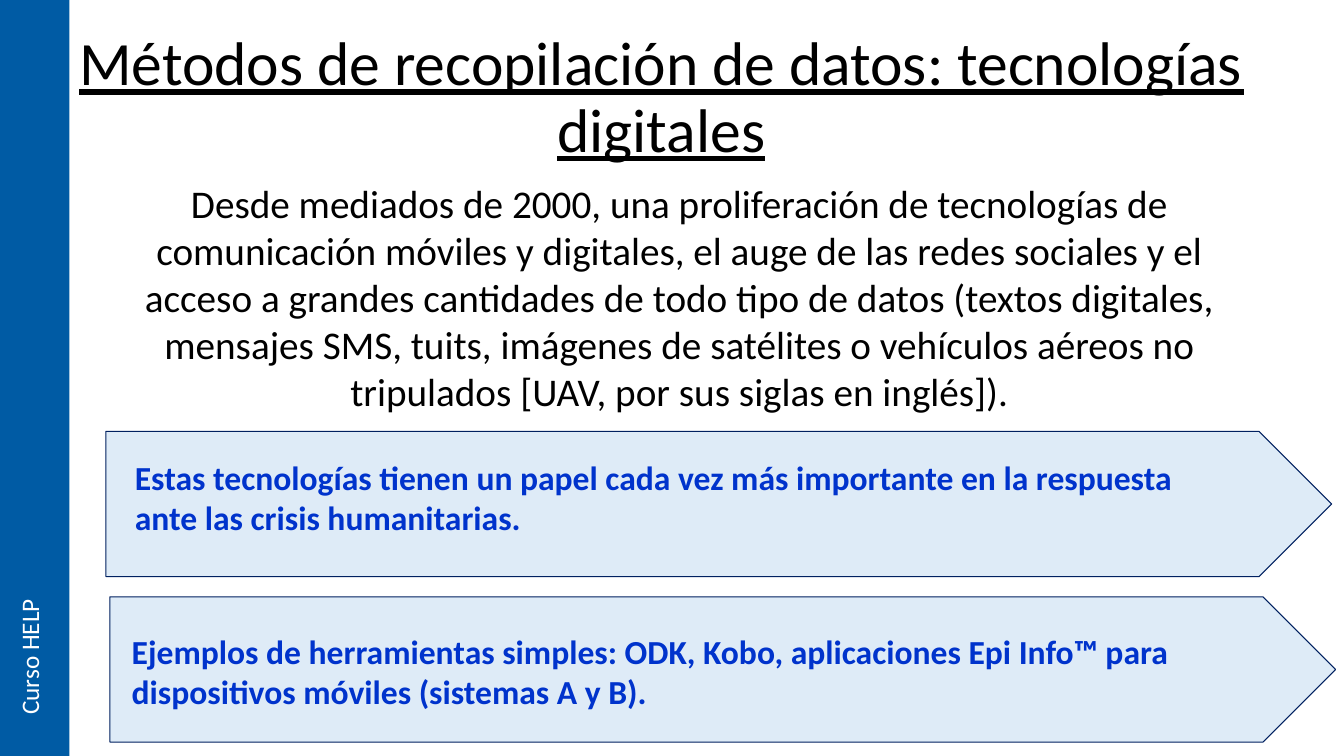
from dataclasses import dataclass

from pptx import Presentation
from pptx.dml.color import RGBColor
from pptx.enum.shapes import MSO_SHAPE
from pptx.enum.text import MSO_ANCHOR, PP_ALIGN
from pptx.shapes.autoshape import Shape
from pptx.slide import Slide
from pptx.util import Cm, Pt

RECTANGLE, PENTAGON = MSO_SHAPE.RECTANGLE, MSO_SHAPE.PENTAGON
LEFT, CENTER = PP_ALIGN.LEFT, PP_ALIGN.CENTER
TOP, MIDDLE = MSO_ANCHOR.TOP, MSO_ANCHOR.MIDDLE

BLACK = RGBColor(0x00, 0x00, 0x00)
WHITE = RGBColor(0xFF, 0xFF, 0xFF)
BAR_BLUE = RGBColor(0x00, 0x5B, 0xA4)
PALE_BLUE = RGBColor(0xDE, 0xEB, 0xF7)
NAVY = RGBColor(0x00, 0x20, 0x60)
TEXT_BLUE = RGBColor(0x00, 0x33, 0xCC)

FONT = "Calibri"
SLIDE_WIDTH, SLIDE_HEIGHT = 33.87, 19.05
ARROW_WIDTH, ARROW_HEIGHT = 30.89, 3.66


@dataclass(frozen=True)
class Area:
    """Position and size in centimetres."""
    left: float
    top: float
    width: float
    height: float

    def lengths(self) -> tuple[Cm, Cm, Cm, Cm]:
        return Cm(self.left), Cm(self.top), Cm(self.width), Cm(self.height)


@dataclass(frozen=True)
class TextBlock:
    area: Area
    lines: tuple[str, ...]
    size: int
    color: RGBColor = BLACK
    align: PP_ALIGN = LEFT
    anchor: MSO_ANCHOR = TOP
    bold: bool = False
    underline: bool = False
    wrap: bool = True
    spacing: float = 1.0


@dataclass(frozen=True)
class ArrowBanner:
    left: float
    top: float
    message: TextBlock


def banner_text(area: Area, *lines: str) -> TextBlock:
    return TextBlock(area, lines, 24, TEXT_BLUE, bold=True, wrap=False)


TITLE = TextBlock(
    Area(0.86, 0.66, 31.62, 3.68),
    ("Métodos de recopilación de datos: tecnologías digitales",),
    44, align=CENTER, anchor=MIDDLE, underline=True, spacing=0.9)
INTRODUCTION = TextBlock(
    Area(2.79, 4.39, 28.65, 6.25),
    ("Desde mediados de 2000, una proliferación de tecnologías de comunicación "
     "móviles y digitales, el auge de las redes sociales y el acceso a grandes "
     "cantidades de todo tipo de datos (textos digitales, mensajes SMS, tuits, "
     "imágenes de satélites o vehículos aéreos no tripulados [UAV, por sus "
     "siglas en inglés]).",),
    28, align=CENTER)
COURSE = TextBlock(Area(0.23, 14.25, 1.27, 4.01), ("Curso HELP",), 18, WHITE, wrap=False)
BANNERS = (
    ArrowBanner(2.67, 10.87, banner_text(
        Area(3.15, 11.38, 27.13, 3.18),
        "Estas tecnologías tienen un papel cada vez más importante en la respuesta",
        "ante las crisis humanitarias.")),
    ArrowBanner(2.77, 15.04, banner_text(
        Area(3.07, 15.77, 27.08, 2.31),
        "Ejemplos de herramientas simples: ODK, Kobo, aplicaciones Epi Info™ para",
        "dispositivos móviles (sistemas A y B).")),
)


def add_text(page: Slide, block: TextBlock) -> Shape:
    box = page.shapes.add_textbox(*block.area.lengths())
    frame = box.text_frame
    frame.word_wrap = block.wrap
    frame.vertical_anchor = block.anchor
    frame.text = "\n".join(block.lines)
    for para in frame.paragraphs:
        para.alignment = block.align
        para.line_spacing = block.spacing
        font = para.font
        font.name, font.size = FONT, Pt(block.size)
        font.bold, font.underline = block.bold, block.underline
        font.color.rgb = block.color
    return box


def add_filled_shape(page: Slide, kind: MSO_SHAPE, area: Area, color: RGBColor) -> Shape:
    shape = page.shapes.add_shape(kind, *area.lengths())
    shape.shadow.inherit = False
    shape.fill.solid()
    shape.fill.fore_color.rgb = color
    shape.line.fill.background()
    return shape


def add_banner(page: Slide, banner: ArrowBanner) -> None:
    area = Area(banner.left, banner.top, ARROW_WIDTH, ARROW_HEIGHT)
    arrow = add_filled_shape(page, PENTAGON, area, PALE_BLUE)
    arrow.adjustments[0] = 0.5
    arrow.line.color.rgb = NAVY
    arrow.line.width = Pt(0.75)
    add_text(page, banner.message)


def main() -> None:
    deck = Presentation()
    deck.slide_width, deck.slide_height = Cm(SLIDE_WIDTH), Cm(SLIDE_HEIGHT)
    page = deck.slides.add_slide(deck.slide_layouts[6])

    add_text(page, TITLE)
    add_text(page, INTRODUCTION)
    add_filled_shape(page, RECTANGLE, Area(0, 0, 1.75, SLIDE_HEIGHT), BAR_BLUE)
    course = add_text(page, COURSE)
    course.element.txBody.bodyPr.set("vert", "vert270")
    for banner in BANNERS:
        add_banner(page, banner)

    deck.save("out.pptx")


if __name__ == "__main__":
    main()
